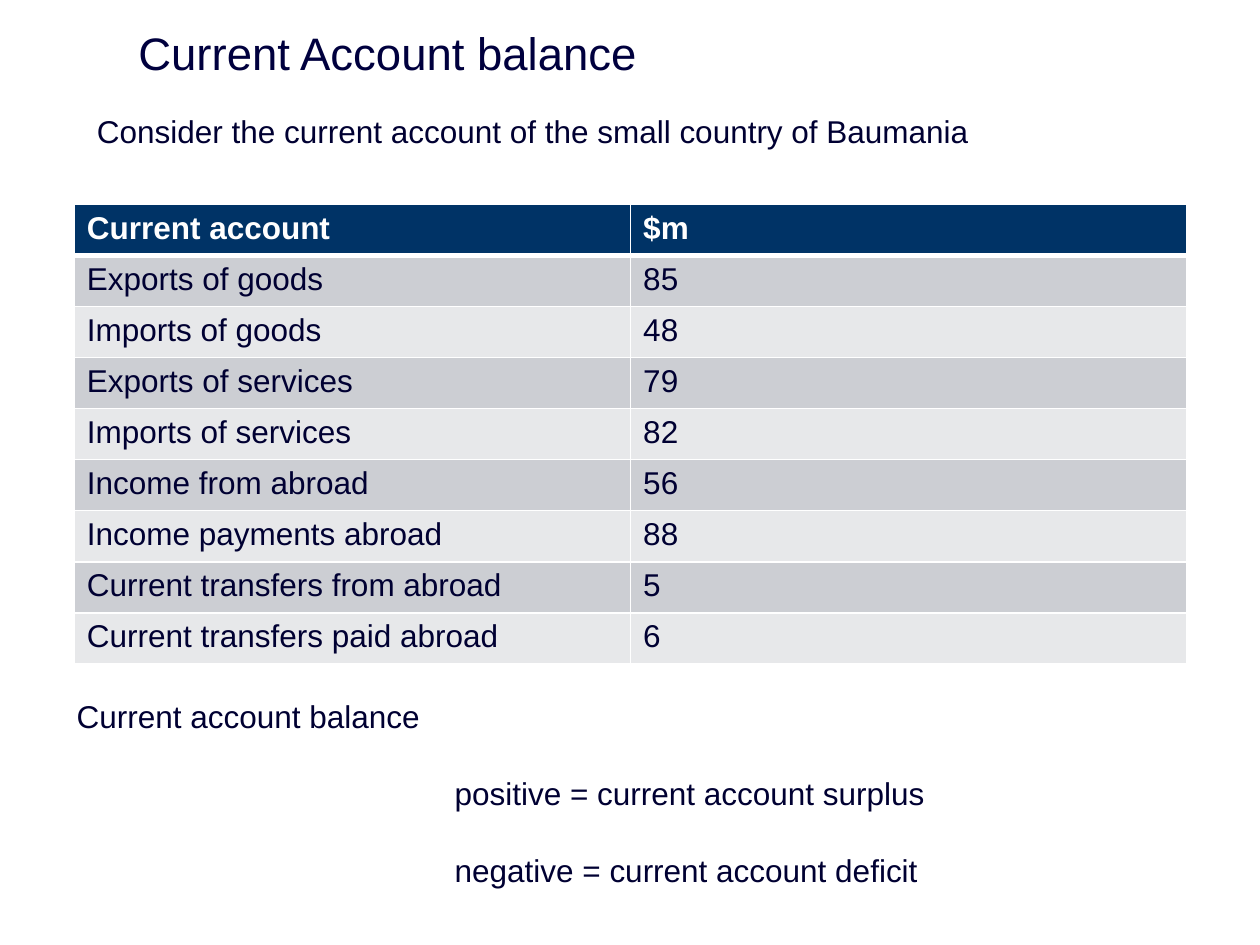
from pptx import Presentation
from pptx.dml.color import RGBColor
from pptx.enum.text import MSO_ANCHOR
from pptx.oxml.ns import qn
from pptx.util import Inches, Pt
from lxml.etree import SubElement

TITLE_NAVY = RGBColor(0x00, 0x00, 0x3E)
TEXT_NAVY = RGBColor(0x00, 0x00, 0x32)
HEADER_BLUE = RGBColor(0x00, 0x33, 0x66)
BAND_DARK = RGBColor(0xCC, 0xCE, 0xD3)
BAND_LIGHT = RGBColor(0xE7, 0xE8, 0xEA)
WHITE = RGBColor(0xFF, 0xFF, 0xFF)

ACCOUNT_ROWS = [
    ("Current account", "$m"),
    ("Exports of goods", "85"),
    ("Imports of goods", "48"),
    ("Exports of services", "79"),
    ("Imports of services", "82"),
    ("Income from abroad", "56"),
    ("Income payments abroad", "88"),
    ("Current transfers from abroad", "5"),
    ("Current transfers paid abroad", "6"),
]


class SlideBuilder:
    """Style and current slide; lengths are units of a 100 by 75 grid."""

    font_name = "Arial"
    body_size = 18
    columns, rows = 100, 75

    def __init__(self, deck):
        self.column = deck.slide_width / self.columns
        self.row = deck.slide_height / self.rows
        self.page = deck.slides.add_slide(deck.slide_layouts[6])

    def area(self, left, top, width, height):
        return (round(left * self.column), round(top * self.row),
                round(width * self.column), round(height * self.row))

    def style(self, para, color, size=None, bold=False):
        para.font.name = self.font_name
        para.font.size = Pt(size or self.body_size)
        para.font.bold = bold
        para.font.color.rgb = color

    def text(self, area, lines, color=TEXT_NAVY, size=None,
             anchor=MSO_ANCHOR.TOP, gap=0, indent=0):
        """Lines after the first are indented and set apart by the gap."""
        frame = self.page.shapes.add_textbox(*self.area(*area)).text_frame
        frame.word_wrap = True
        frame.vertical_anchor = anchor
        for index, line in enumerate(lines):
            para = frame.add_paragraph() if index else frame.paragraphs[0]
            para.text = line
            if index:
                para.space_before = Pt(gap)
                para._p.get_or_add_pPr().set("marL", str(round(indent * self.column)))
            self.style(para, color, size)

    def borders(self, cell, bottom):
        properties = cell._tc.get_or_add_tcPr()
        for side, width in (("L", 1), ("R", 1), ("T", 1), ("B", bottom)):
            line = SubElement(properties, qn(f"a:ln{side}"), w=str(Pt(width)))
            fill = SubElement(line, qn("a:solidFill"))
            SubElement(fill, qn("a:srgbClr"), val=str(WHITE))

    def table(self, area, records):
        shape = self.page.shapes.add_table(
            len(records), len(records[0]), *self.area(*area))
        for row_index, record in enumerate(records):
            header = row_index == 0
            band = BAND_DARK if row_index % 2 else BAND_LIGHT
            for column_index, value in enumerate(record):
                cell = shape.table.cell(row_index, column_index)
                cell.text = value
                # The header's thick rule is shared with the row below
                self.borders(cell, bottom=3 if header else 1)
                if row_index == 1:
                    cell._tc.tcPr.find(qn("a:lnT")).set("w", str(Pt(3)))
                cell.fill.solid()
                cell.fill.fore_color.rgb = HEADER_BLUE if header else band
                self.style(cell.text_frame.paragraphs[0],
                           WHITE if header else TEXT_NAVY, bold=header)


def main():
    deck = Presentation()
    deck.slide_width, deck.slide_height = Inches(10), Inches(7.5)
    slide = SlideBuilder(deck)

    # Title and introduction
    slide.text((10, 1.6, 90, 5.1), ["Current Account balance"],
               color=TITLE_NAVY, size=26, anchor=MSO_ANCHOR.MIDDLE)
    slide.text((6.7, 8.4, 87.5, 4),
               ["Consider the current account of the small country of Baumania"])

    # Account figures
    slide.table((5.9, 16.2, 88.3, 36.5), ACCOUNT_ROWS)

    # Meaning of the balance
    slide.text((5.1, 54.8, 92.1, 16.2),
               ["Current account balance",
                "positive = current account surplus",
                "negative = current account deficit"],
               gap=22.5, indent=30)

    deck.save("out.pptx")


if __name__ == "__main__":
    main()
